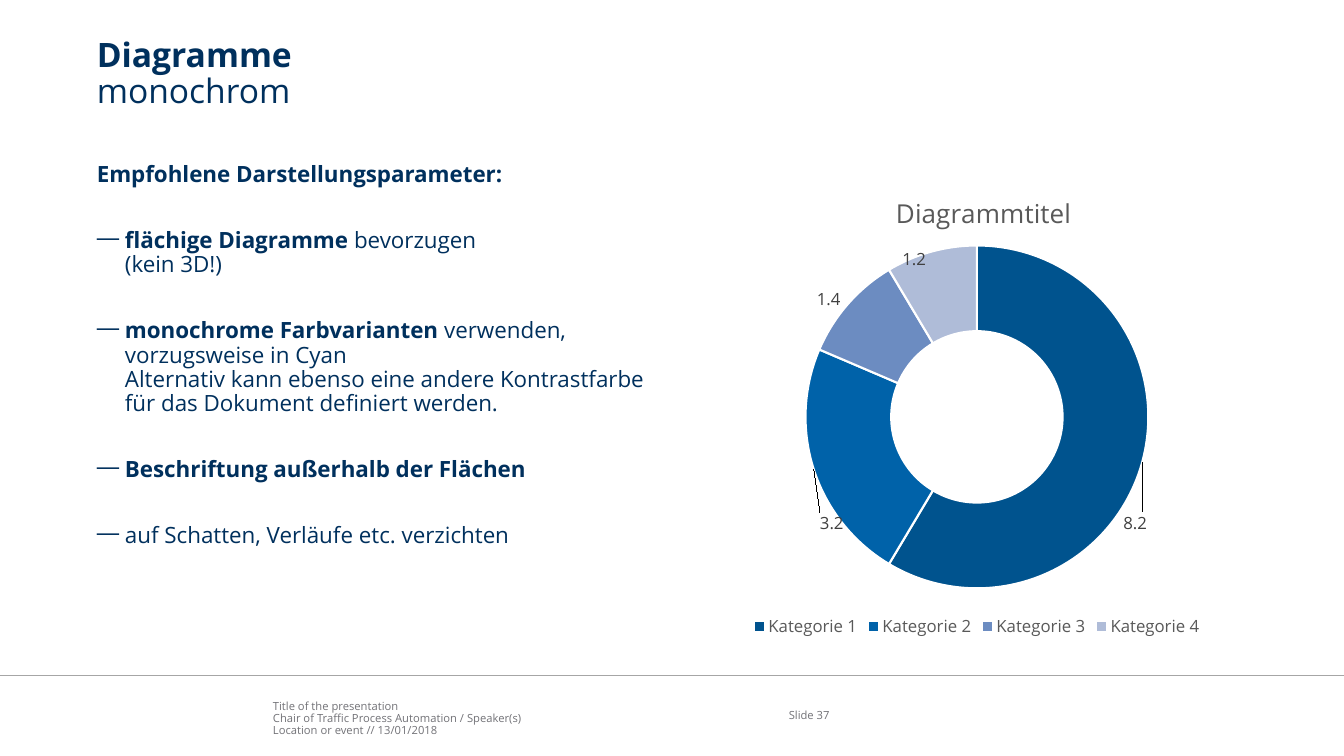
from typing import NamedTuple

from lxml.etree import SubElement
from pptx import Presentation
from pptx.chart.data import CategoryChartData
from pptx.dml.color import RGBColor
from pptx.enum.chart import XL_CHART_TYPE as ChartType, XL_LEGEND_POSITION as LegendPosition
from pptx.enum.shapes import MSO_CONNECTOR as ConnectorType
from pptx.enum.text import MSO_ANCHOR as Anchor
from pptx.oxml import parse_xml
from pptx.oxml.ns import nsdecls, qn
from pptx.util import Cm, Pt

FONT = "Open Sans"
COLORS = {"navy": "00305D", "footer": "727277", "rule": "A6A6A6",
          "text": "595959", "label": "404040", "white": "FFFFFF"}


class Run(NamedTuple):
    text: str
    bold: bool = False


class Item(NamedTuple):
    runs: list[Run]
    bullet: bool = False
    space_before: float = 0


class Block(NamedTuple):
    left: float
    top: float
    width: float
    height: float
    size: float
    color: str
    items: list[Item]
    anchor: Anchor = Anchor.TOP


class Segment(NamedTuple):
    category: str
    value: float
    color: str
    label_x: float  # label offset as a share of the chart width
    label_y: float  # label offset as a share of the chart height


def point(*runs: Run) -> Item:
    return Item(list(runs), bullet=True, space_before=30)


BLOCKS = [
    # Title
    Block(2.44, 0.97, 29.39, 1.9, 24, "navy",
          [Item([Run("Diagramme\n", True), Run("monochrom")])]),
    # Recommendations
    Block(2.44, 4.11, 14.43, 12.07, 16, "navy", [
        Item([Run("Empfohlene Darstellungsparameter:", True)]),
        point(Run("flächige Diagramme ", True), Run("bevorzugen\n(kein 3D!)")),
        point(Run("monochrome Farbvarianten ", True),
              Run("verwenden, vorzugsweise in Cyan\nAlternativ kann ebenso eine andere "
                  "Kontrastfarbe für das Dokument definiert werden.")),
        point(Run("Beschriftung außerhalb der Flächen", True)),
        point(Run("auf Schatten, Verläufe etc. verzichten")),
    ]),
    # Footer
    Block(6.88, 17.55, 12.45, 1.02, 8, "footer", [
        Item([Run("Title of the presentation")]),
        Item([Run("Chair of Traffic Process Automation / Speaker(s)")]),
        Item([Run("Location or event // 13/01/2018")]),
    ], Anchor.BOTTOM),
    Block(19.88, 17.53, 1.96, 1.02, 8, "footer", [Item([Run("Slide 37")])], Anchor.MIDDLE),
]

SEGMENTS = [
    Segment("Kategorie 1", 8.2, "00538E", 0.06, 0.15),
    Segment("Kategorie 2", 3.2, "0062A9", -0.04, 0.14),
    Segment("Kategorie 3", 1.4, "6C8CC1", -0.09, -0.07),
    Segment("Kategorie 4", 1.2, "AFBCD8", -0.05, -0.07),
]


def style_font(font, size: float, color: str, bold: bool = False) -> None:
    font.name, font.size, font.bold = FONT, Pt(size), bold
    font.color.rgb = RGBColor.from_string(COLORS[color])


def add_bullet(paragraph) -> None:
    properties = paragraph._p.get_or_add_pPr()
    properties.set("marL", str(Cm(0.71)))
    properties.set("indent", str(-Cm(0.71)))
    SubElement(properties, qn("a:buChar")).set("char", "—")


def add_block(slide, block: Block) -> None:
    shape = slide.shapes.add_textbox(Cm(block.left), Cm(block.top),
                                     Cm(block.width), Cm(block.height))
    frame = shape.text_frame
    frame.word_wrap = True
    frame.vertical_anchor = block.anchor
    frame.margin_left = frame.margin_top = frame.margin_right = frame.margin_bottom = 0
    for index, item in enumerate(block.items):
        paragraph = frame.add_paragraph() if index else frame.paragraphs[0]
        if item.bullet:
            add_bullet(paragraph)
        paragraph.line_spacing = 0.9
        paragraph.space_before = Pt(item.space_before)
        for part in item.runs:
            for line_index, line in enumerate(part.text.split("\n")):
                if line_index:
                    paragraph.add_line_break()
                if line:
                    run = paragraph.add_run()
                    run.text = line
                    style_font(run.font, block.size, block.color, part.bold)


def manual_layout(**settings: object):
    """Build a chart layout element; the settings follow the schema order."""
    layout = parse_xml(f"<c:layout {nsdecls('c')}><c:manualLayout/></c:layout>")
    for name, value in settings.items():
        SubElement(layout[0], qn(f"c:{name}")).set("val", str(value))
    return layout


def add_doughnut(slide) -> None:
    data = CategoryChartData()
    data.categories = [segment.category for segment in SEGMENTS]
    data.add_series("Series 1", [segment.value for segment in SEGMENTS])
    chart = slide.shapes.add_chart(ChartType.DOUGHNUT, Cm(17.42), Cm(4.11),
                                   Cm(14.4), Cm(12.07), data).chart
    style_font(chart.font, 10, "text")

    # Chart title and legend
    chart.has_title = True
    run = chart.chart_title.text_frame.paragraphs[0].add_run()
    run.text = "Diagrammtitel"
    style_font(run.font, 18.6, "text")
    title = chart.chart_title._element
    for layout in title.findall(qn("c:layout")):
        title.remove(layout)
    title.find(qn("c:tx")).addnext(
        manual_layout(xMode="edge", yMode="edge", x=0.35, y=0.05))
    chart.chart_title.include_in_layout = False
    chart.has_legend = True
    chart.legend.position = LegendPosition.BOTTOM
    chart.legend.include_in_layout = False
    style_font(chart.legend.font, 12, "text")

    # Ring position and hole
    plot_area = chart._chartSpace.chart.plotArea
    for layout in plot_area.findall(qn("c:layout")):
        plot_area.remove(layout)
    plot_area.insert(0, manual_layout(layoutTarget="inner", xMode="edge", yMode="edge",
                                      x=0.2, y=0.17, w=0.6, h=0.72))
    plot = chart.plots[0]
    plot.vary_by_categories = True
    plot._element.find(qn("c:holeSize")).set("val", "75")

    # Segments and their shifted labels
    series = plot.series[0]
    for index, segment in enumerate(SEGMENTS):
        ring_part = series.points[index]
        ring_part.format.fill.solid()
        ring_part.format.fill.fore_color.rgb = RGBColor.from_string(segment.color)
        ring_part.format.line.color.rgb = RGBColor.from_string(COLORS["white"])
        ring_part.format.line.width = Pt(1.5)
        style_font(ring_part.data_label.font, 12, "label")
    labels = series._element.iter(qn("c:dLbl"))
    for label, segment in zip(labels, SEGMENTS):
        label.find(qn("c:idx")).addnext(manual_layout(x=segment.label_x, y=segment.label_y))


def add_rule(slide, width: int) -> None:
    rule = slide.shapes.add_connector(ConnectorType.STRAIGHT, 0, Cm(17.02), width, Cm(17.02))
    rule.line.color.rgb = RGBColor.from_string(COLORS["rule"])
    rule.line.width = Pt(1)
    SubElement(rule._element.spPr, qn("a:effectLst"))


def main() -> None:
    presentation = Presentation()
    presentation.slide_width, presentation.slide_height = Cm(33.87), Cm(19.05)
    slide = presentation.slides.add_slide(presentation.slide_layouts[6])
    add_rule(slide, presentation.slide_width)
    for block in BLOCKS:
        add_block(slide, block)
    add_doughnut(slide)
    presentation.save("out.pptx")


if __name__ == "__main__":
    main()
